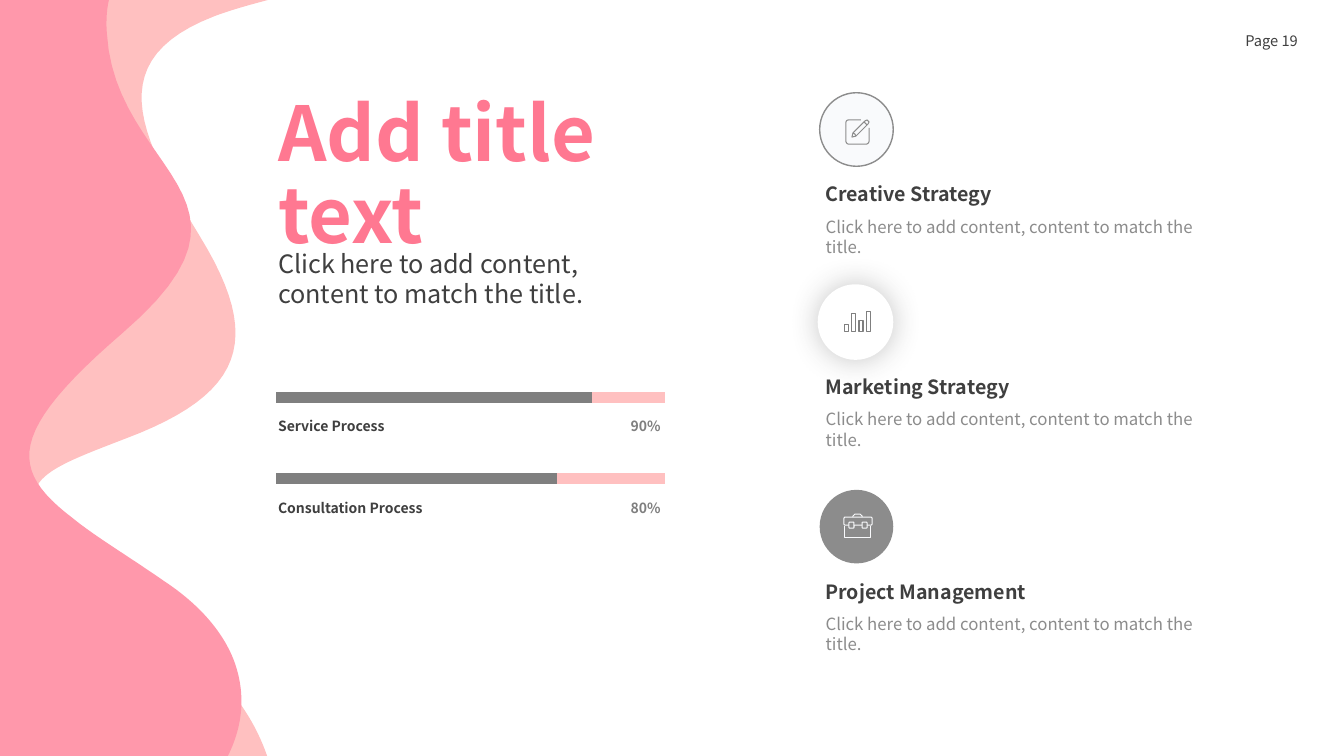
import pptx
import pptx.util
import pptx.dml.color
import pptx.enum.shapes
import pptx.enum.text
import pptx.oxml
import pptx.oxml.ns
from dataclasses import dataclass

Inches = pptx.util.Inches
Align = pptx.enum.text.PP_ALIGN
Anchor = pptx.enum.text.MSO_ANCHOR
Shape = pptx.enum.shapes.MSO_SHAPE


@dataclass(frozen=True)
class Theme:
    font: str = "Noto Sans CJK SC"
    ink: str = "3F3F3F"
    grey: str = "7F7F7F"
    soft: str = "8C8C8C"
    pale: str = "F9FAFC"
    white: str = "FFFFFF"
    title: str = "FF7891"
    rose: str = "FF98AB"
    blush: str = "FFC0C0"
    title_size: float = 54
    subtitle_size: float = 18
    heading_size: float = 14
    detail_size: float = 12
    page_size: float = 10.5
    label_size: float = 10
    bar_weight: float = 8
    icon_weight: float = 0.75


def trace(start, segments, steps=24):
    points = [start]
    for segment in segments:
        if len(segment) == 2:
            points.append(segment)
            continue
        x0, y0 = points[-1]
        x1, y1, x2, y2, x3, y3 = segment
        for step in range(1, steps + 1):
            t = step / steps
            u = 1 - t
            a, b, c, d = u ** 3, 3 * u * u * t, 3 * u * t * t, t ** 3
            points.append((a * x0 + b * x1 + c * x2 + d * x3,
                           a * y0 + b * y1 + c * y2 + d * y3))
    return points


class Page:
    def __init__(self, deck, theme):
        self.theme = theme
        self.shapes = deck.slides.add_slide(deck.slide_layouts[6]).shapes

    def colour(self, value):
        return pptx.dml.color.RGBColor.from_string(value)

    def paint(self, shape, fill=None, line=None, weight=1):
        shape.shadow.inherit = False
        if fill:
            shape.fill.solid()
            shape.fill.fore_color.rgb = self.colour(fill)
        else:
            shape.fill.background()
        if line:
            shape.line.color.rgb = self.colour(line)
            shape.line.width = pptx.util.Pt(weight)
        else:
            shape.line.fill.background()
        return shape

    def outline(self, points, closed=True, **style):
        corners = [(Inches(x), Inches(y)) for x, y in points]
        builder = self.shapes.build_freeform(*corners[0], scale=1.0)
        builder.add_line_segments(corners[1:], close=closed)
        return self.paint(builder.convert_to_shape(), **style)

    def preset(self, kind, left, top, width, height, **style):
        shape = self.shapes.add_shape(kind, Inches(left), Inches(top), Inches(width), Inches(height))
        return self.paint(shape, **style)

    def glow(self, shape, colour, opacity, blur):
        effects = shape._element.spPr.find(pptx.oxml.ns.qn("a:effectLst"))
        effects.append(pptx.oxml.parse_xml(
            f'<a:outerShdw {pptx.oxml.ns.nsdecls("a")} blurRad="{pptx.util.Pt(blur)}" dist="0" '
            f'algn="ctr" rotWithShape="0"><a:srgbClr val="{colour}">'
            f'<a:alpha val="{opacity * 1000}"/></a:srgbClr></a:outerShdw>'))

    def text(self, wording, left, top, width, height, size, colour, bold=False,
             align=Align.LEFT, anchor=Anchor.TOP, before=10, spacing=None):
        box = self.shapes.add_textbox(Inches(left), Inches(top), Inches(width), Inches(height))
        frame = box.text_frame
        frame.word_wrap = True
        frame.vertical_anchor = anchor
        frame.text = wording
        para = frame.paragraphs[0]
        para.alignment = align
        para.space_before = pptx.util.Pt(before)
        if spacing:
            para.line_spacing = spacing
        font = para.runs[0].font
        font.name = self.theme.font
        font.size = pptx.util.Pt(size)
        font.bold = bold
        font.color.rgb = self.colour(colour)

    def line(self, x1, y1, x2, y2, colour, weight):
        line = self.shapes.add_connector(pptx.enum.shapes.MSO_CONNECTOR.STRAIGHT,
                                         Inches(x1), Inches(y1), Inches(x2), Inches(y2))
        line.line.color.rgb = self.colour(colour)
        line.line.width = pptx.util.Pt(weight)
        line._element.spPr.append(pptx.oxml.parse_xml(f'<a:effectLst {pptx.oxml.ns.nsdecls("a")}/>'))

    def progress(self, name, percent, top):
        theme = self.theme
        left, full_scale = 2.74, 3.48
        self.line(left, top, 6.6, top, theme.blush, theme.bar_weight)
        self.line(left, top, left + full_scale * percent / 100, top, theme.grey, theme.bar_weight)
        self.text(name, 2.66, top + 0.07, 2.96, 0.32, theme.label_size, theme.ink, True, spacing=1.5)
        self.text(f"{percent}%", 5.9, top + 0.07, 0.75, 0.32, theme.label_size, theme.grey, True,
                  align=Align.RIGHT, spacing=1.5)

    def topic(self, heading, detail, top):
        theme = self.theme
        self.text(heading, 8.09, top, 3.9, 0.34, theme.heading_size, theme.ink, True)
        self.text(detail, 8.09, top + 0.34, 3.9, 0.49, theme.detail_size, theme.soft)

    def pencil_icon(self):
        pen = dict(line=self.theme.soft, weight=self.theme.icon_weight)
        sheet = trace((8.54, 1.19), [
            (8.42, 1.19), (8.4, 1.19, 8.39, 1.2, 8.39, 1.22),
            (8.39, 1.4), (8.39, 1.41, 8.4, 1.43, 8.42, 1.43),
            (8.59, 1.43), (8.61, 1.43, 8.62, 1.41, 8.62, 1.4), (8.62, 1.27)], 6)
        self.outline(sheet, closed=False, **pen)
        self.outline([(8.45, 1.36), (8.46, 1.32), (8.58, 1.2), (8.6, 1.19), (8.62, 1.21),
                      (8.61, 1.23), (8.49, 1.35)], **pen)
        self.line(8.57, 1.21, 8.6, 1.24, self.theme.soft, self.theme.icon_weight)
        self.outline([(8.46, 1.32), (8.48, 1.33), (8.49, 1.35)], closed=False, **pen)

    def bars_icon(self):
        for index, top in enumerate((3.22, 3.11, 3.18, 3.09)):
            self.preset(Shape.RECTANGLE, 8.38 + 0.07 * index, top, 0.04, 3.29 - top,
                        line=self.theme.grey, weight=self.theme.icon_weight)

    def briefcase_icon(self):
        pen = dict(line=self.theme.pale, weight=self.theme.icon_weight)
        self.outline([(8.46, 5.13), (8.46, 5.12), (8.48, 5.1), (8.53, 5.1), (8.55, 5.12),
                      (8.55, 5.13)], closed=False, **pen)
        self.preset(Shape.ROUNDED_RECTANGLE, 8.37, 5.13, 0.28, 0.08, **pen)
        self.outline([(8.38, 5.22), (8.38, 5.33), (8.63, 5.33), (8.63, 5.22)], closed=False, **pen)
        for left in (8.42, 8.55):
            self.preset(Shape.ROUNDED_RECTANGLE, left, 5.18, 0.05, 0.06,
                        fill=self.theme.soft, **pen)


def main():
    deck = pptx.Presentation()
    deck.slide_width, deck.slide_height = Inches(13.33), Inches(7.5)
    theme = Theme()
    page = Page(deck, theme)

    back_wave = trace((0, 0), [
        (2.66, 0), (2.47, 0.05, 2.29, 0.1, 2.13, 0.16), (1.04, 0.58, 1.34, 1.29, 1.98, 2.34),
        (2.62, 3.38, 2.41, 3.91, 1.25, 4.35), (0.55, 4.62, 0.17, 4.75, 0.42, 5.14),
        (0.58, 5.39, 1, 5.76, 1.75, 6.33), (1.85, 6.42, 1.95, 6.5, 2.03, 6.58),
        (2.37, 6.9, 2.55, 7.21, 2.65, 7.5), (0, 7.5)])
    front_wave = trace((0, 0), [
        (1.08, 0), (1.06, 0.09, 1.05, 0.2, 1.06, 0.33), (1.14, 1.72, 2.79, 1.95, 1.22, 3.3),
        (0.07, 4.29, 0.09, 4.66, 0.72, 5.14), (0.94, 5.32, 1.26, 5.51, 1.62, 5.76),
        (1.97, 5.99, 2.22, 6.27, 2.33, 6.58), (2.43, 6.87, 2.42, 7.18, 2.26, 7.5), (0, 7.5)])
    page.outline(back_wave, fill=theme.blush)
    page.outline(front_wave, fill=theme.rose)

    page.text("Page 19", 9.97, 0.2, 3, 0.4, theme.page_size, theme.ink,
              align=Align.RIGHT, anchor=Anchor.MIDDLE, before=0)
    page.preset(Shape.OVAL, 8.13, 0.92, 0.73, 0.73, fill=theme.pale, line=theme.soft)
    badge = page.preset(Shape.OVAL, 8.11, 2.82, 0.75, 0.75, fill=theme.white)
    page.glow(badge, theme.ink, 30, 21)
    page.preset(Shape.OVAL, 8.13, 4.86, 0.73, 0.73, fill=theme.soft)

    prompt = "Click here to add content, content to match the title."
    page.text(prompt, 2.66, 2.41, 3.99, 1.09, theme.subtitle_size, theme.ink)
    page.text("Add title text", 2.66, 1.11, 4.66, 1.31, theme.title_size, theme.title, True,
              anchor=Anchor.MIDDLE, before=0, spacing=0.9)
    for name, percent, top in (("Service Process", 90, 3.94), ("Consultation Process", 80, 4.75)):
        page.progress(name, percent, top)
    for heading, top in (("Creative Strategy", 1.76), ("Marketing Strategy", 3.67),
                         ("Project Management", 5.7)):
        page.topic(heading, prompt, top)
    page.pencil_icon()
    page.bars_icon()
    page.briefcase_icon()
    deck.save("out.pptx")


if __name__ == "__main__":
    main()
